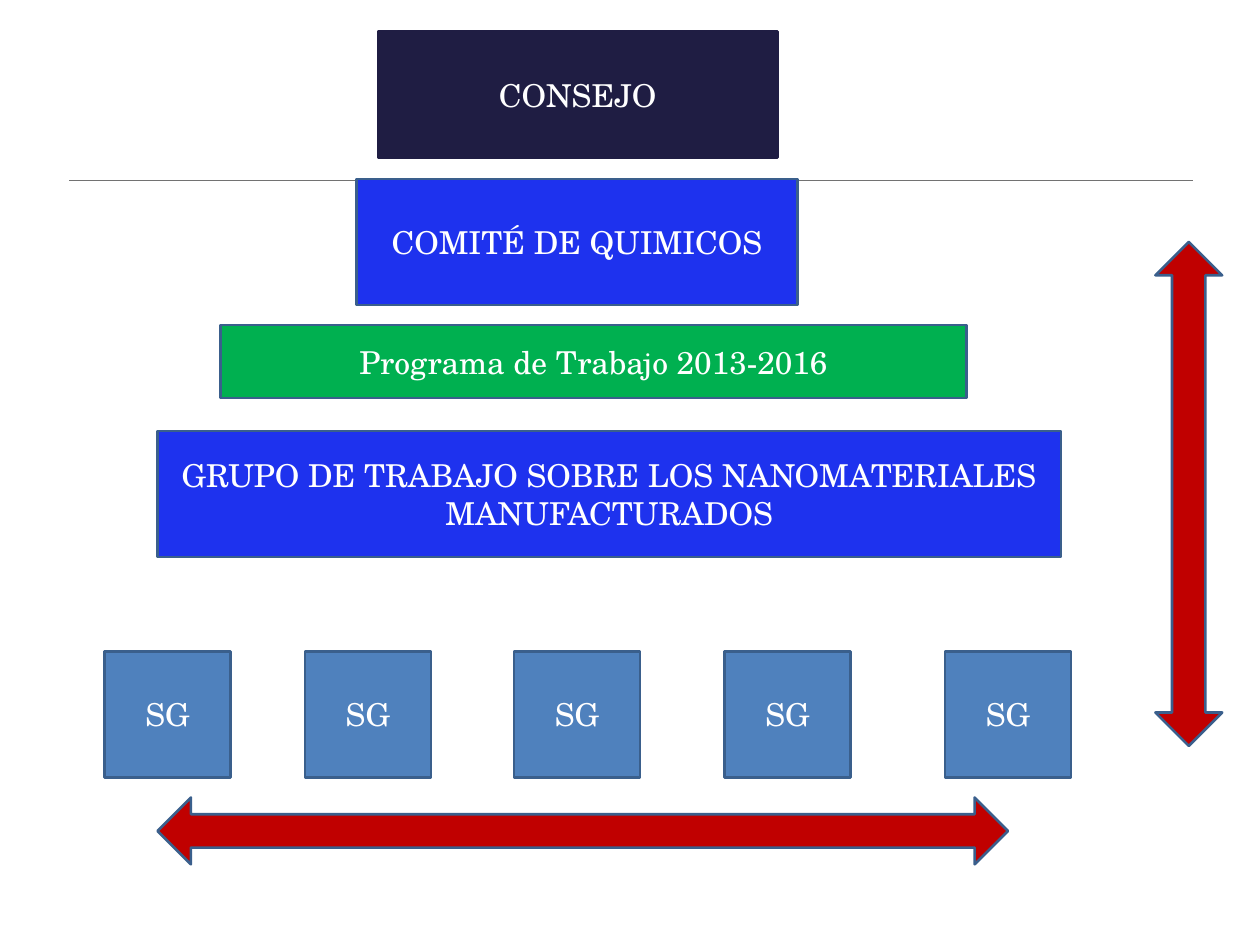
from pptx import Presentation
from pptx.dml.color import RGBColor
from pptx.enum.shapes import MSO_CONNECTOR, MSO_SHAPE
from pptx.enum.text import MSO_ANCHOR, PP_ALIGN
from pptx.oxml.ns import qn
from pptx.util import Inches, Pt
from lxml import etree

RECT = MSO_SHAPE.RECTANGLE
ACROSS = MSO_SHAPE.LEFT_RIGHT_ARROW
UPRIGHT = MSO_SHAPE.UP_DOWN_ARROW
STRAIGHT = MSO_CONNECTOR.STRAIGHT
MIDDLE = MSO_ANCHOR.MIDDLE
CENTER = PP_ALIGN.CENTER

WHITE = RGBColor(0xFF, 0xFF, 0xFF)
GRAY = RGBColor(0x72, 0x72, 0x72)
NAVY = RGBColor(0x1F, 0x1D, 0x43)
BLUE = RGBColor(0x1E, 0x32, 0xEE)
GREEN = RGBColor(0x00, 0xB0, 0x50)
STEEL = RGBColor(0x4F, 0x81, 0xBD)
RED = RGBColor(0xC0, 0x00, 0x00)
EDGE = RGBColor(0x3A, 0x5F, 0x8C)
FONT = "TeX Gyre Schola"


def add_block(kind, x, y, w, h, fill, edge=EDGE, text=""):
    sp = s.shapes.add_shape(kind, Inches(x), Inches(y), Inches(w), Inches(h))
    sp.shadow.inherit = False
    sp.fill.solid()
    sp.fill.fore_color.rgb = fill
    sp.line.color.rgb = edge
    sp.line.width = Pt(1.5)
    if text:
        tf = sp.text_frame
        tf.text = text
        tf.word_wrap = True
        tf.vertical_anchor = MIDDLE
        p = tf.paragraphs[0]
        p.alignment = CENTER
        font = p.runs[0].font
        font.name = FONT
        font.size = Pt(18)
        font.color.rgb = WHITE


prs = Presentation()
prs.slide_width = Inches(10)
prs.slide_height = Inches(7.5)
s = prs.slides.add_slide(prs.slide_layouts[6])

rule = s.shapes.add_connector(STRAIGHT, Inches(0.55), Inches(1.43), Inches(9.47), Inches(1.43))
rule.line.color.rgb = GRAY
rule.line.width = Pt(0.5)
etree.SubElement(rule._element.spPr, qn("a:effectLst"))

levels = [
    (3, 0.25, 3.17, 1, NAVY, NAVY, "CONSEJO"),
    (2.83, 1.42, 3.5, 1, BLUE, EDGE, "COMITÉ DE QUIMICOS"),
    (1.25, 3.42, 7.17, 1, BLUE, EDGE, "GRUPO DE TRABAJO SOBRE LOS NANOMATERIALES MANUFACTURADOS"),
    (1.75, 2.58, 5.92, 0.58, GREEN, EDGE, "Programa de Trabajo 2013-2016"),
]
for level in levels:
    add_block(RECT, *level)

for x in (0.83, 2.42, 4.08, 5.75, 7.5):
    add_block(RECT, x, 5.17, 1, 1, STEEL, text="SG")

add_block(ACROSS, 1.25, 6.33, 6.75, 0.53, RED)
add_block(UPRIGHT, 9.17, 1.92, 0.53, 4, RED)

prs.save("out.pptx")
